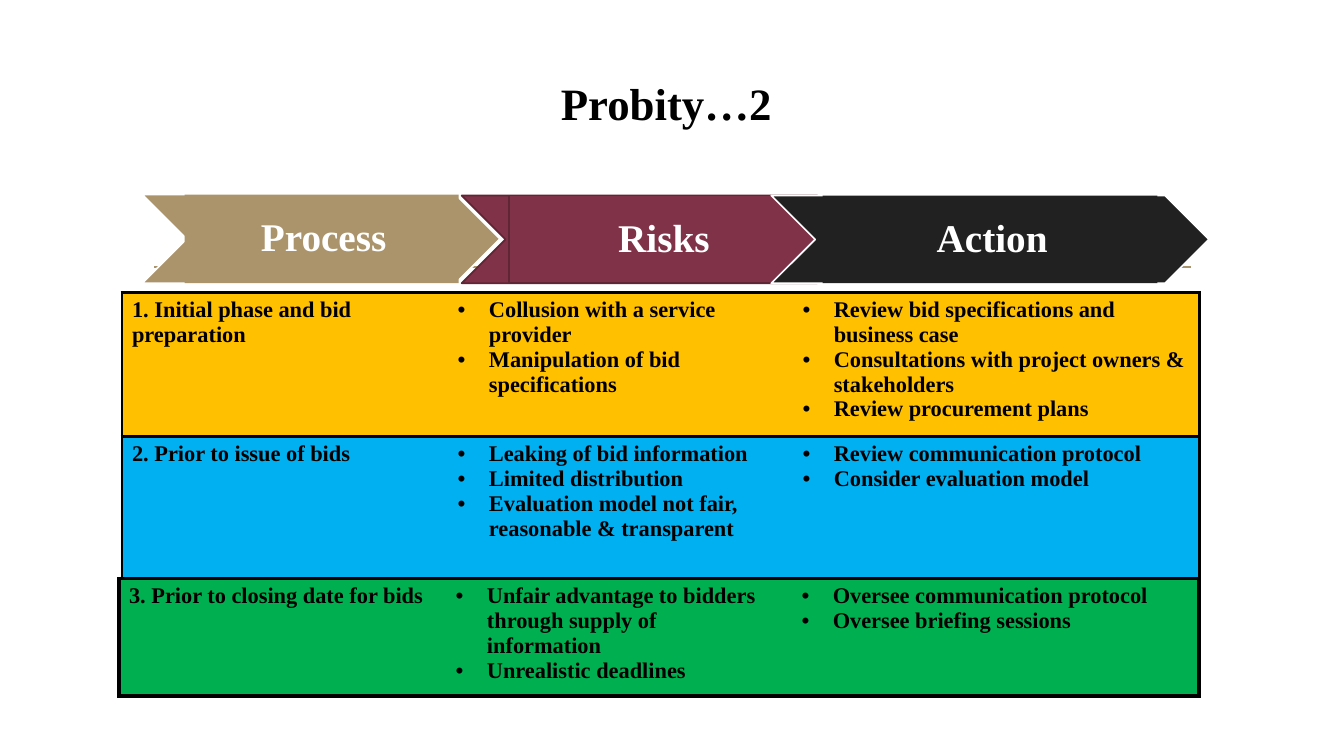
from lxml import etree
from pptx import Presentation
from pptx.dml.color import RGBColor
from pptx.enum.shapes import MSO_CONNECTOR, MSO_SHAPE
from pptx.enum.text import MSO_ANCHOR, PP_ALIGN
from pptx.oxml.ns import qn
from pptx.util import Inches, Pt

FONT = "Times New Roman"
BLACK = RGBColor(0x00, 0x00, 0x00)
WHITE = RGBColor(0xFF, 0xFF, 0xFF)
TAN = RGBColor(0xAB, 0x94, 0x6B)
WINE = RGBColor(0x80, 0x33, 0x48)
DARK_WINE = RGBColor(0x5F, 0x26, 0x35)
CHARCOAL = RGBColor(0x21, 0x21, 0x21)
AMBER = RGBColor(0xFF, 0xC0, 0x00)
BLUE = RGBColor(0x00, 0xB0, 0xF0)
GREEN = RGBColor(0x00, 0xB0, 0x50)

BULLET_HANG = 0.31
BULLET_MARGINS = (None, 0.31, 0.5)  # one per column; None means no bullets

# chevron left and width, label left and width, top, height, fill, outline, label outline
BANNERS = [
    ("Process", 1.41, 3.55, 1.83, 2.72, 1.93, 0.88, TAN, WHITE, None),
    ("Risks", 4.58, 3.96, 5.05, 3.03, 1.94, 0.87, WINE, DARK_WINE, DARK_WINE),
    ("Action", 7.65, 4.34, 8.16, 3.32, 1.94, 0.87, CHARCOAL, WHITE, None),
]

EARLY_PHASES = [
    (["1. Initial phase and bid preparation"],
     ["Collusion with a service provider", "Manipulation of bid specifications"],
     ["Review bid specifications and business case",
      "Consultations with project owners & stakeholders",
      "Review procurement plans"]),
    (["2. Prior to issue of bids"],
     ["Leaking of bid information", "Limited distribution",
      "Evaluation model not fair, reasonable & transparent"],
     ["Review communication protocol", "Consider evaluation model"]),
]
CLOSING_PHASE = [
    (["3. Prior to closing date for bids"],
     ["Unfair advantage to bidders through supply of information",
      "Unrealistic deadlines"],
     ["Oversee communication protocol", "Oversee briefing sessions"]),
]


def add_run(paragraph, text, size, color):
    run = paragraph.add_run()
    run.text = text
    run.font.name = FONT
    run.font.size = Pt(size)
    run.font.bold = True
    run.font.color.rgb = color


def add_title(slide, left, top, width, height):
    frame = slide.shapes.add_textbox(
        Inches(left), Inches(top), Inches(width), Inches(height)).text_frame
    frame.word_wrap = True
    frame.vertical_anchor = MSO_ANCHOR.MIDDLE
    frame.paragraphs[0].alignment = PP_ALIGN.CENTER
    add_run(frame.paragraphs[0], "Probity…2 ", 32, BLACK)


def add_rule(slide, left, right, y):
    rule = slide.shapes.add_connector(
        MSO_CONNECTOR.STRAIGHT, Inches(left), Inches(y), Inches(right), Inches(y))
    rule.line.color.rgb = TAN
    rule.line.width = Pt(1.25)
    etree.SubElement(rule._element.spPr, qn("a:effectLst"))


def add_block(slide, preset, left, top, width, height, fill, outline):
    block = slide.shapes.add_shape(
        preset, Inches(left), Inches(top), Inches(width), Inches(height))
    block.shadow.inherit = False
    block.fill.solid()
    block.fill.fore_color.rgb = fill
    if outline is None:
        block.line.fill.background()
    else:
        block.line.color.rgb = outline
        block.line.width = Pt(1.25)
    return block


def add_banner(slide, heading, left, width, label_left, label_width, top, height,
               fill, outline, label_outline):
    """A chevron with its heading on a rectangle of the same colour."""
    add_block(slide, MSO_SHAPE.CHEVRON, left, top, width, height, fill, outline)
    label = add_block(slide, MSO_SHAPE.RECTANGLE, label_left, top, label_width,
                      height, fill, label_outline)
    frame = label.text_frame
    frame.word_wrap = True
    frame.vertical_anchor = MSO_ANCHOR.MIDDLE
    frame.margin_left = Inches(0.06)
    frame.margin_top = frame.margin_right = frame.margin_bottom = Inches(0.02)
    paragraph = frame.paragraphs[0]
    paragraph.alignment = PP_ALIGN.CENTER
    paragraph.line_spacing = 0.9
    add_run(paragraph, heading, 28, WHITE)


def set_border(cell, side, points):
    """Draw one side of the cell in black, or hide it when points is None."""
    border = etree.SubElement(cell._tc.get_or_add_tcPr(), qn(f"a:ln{side}"))
    if points is None:
        etree.SubElement(border, qn("a:noFill"))
        return
    border.set("w", str(Pt(points)))
    solid = etree.SubElement(border, qn("a:solidFill"))
    etree.SubElement(solid, qn("a:srgbClr"), val=str(BLACK))


def set_fill(cell, color, opacity):
    cell.fill.solid()
    cell.fill.fore_color.rgb = color
    if opacity < 100:
        tint = cell._tc.tcPr.find(".//" + qn("a:srgbClr"))
        etree.SubElement(tint, qn("a:alpha"), val=str(opacity * 1000))


def fill_cell(cell, items, margin):
    for index, item in enumerate(items):
        frame = cell.text_frame
        paragraph = frame.add_paragraph() if index else frame.paragraphs[0]
        if margin is not None:
            properties = paragraph._p.get_or_add_pPr()
            properties.set("marL", str(Inches(margin)))
            properties.set("indent", str(-Inches(BULLET_HANG)))
            etree.SubElement(properties, qn("a:buFont"), typeface="Arial")
            etree.SubElement(properties, qn("a:buChar"), char="•")
        add_run(paragraph, item, 16, BLACK)


def add_phase_table(slide, left, top, widths, heights, phases, colors, rules,
                    opacity=100):
    """Phases as rows; rules holds the border widths above, between and below them."""
    table = slide.shapes.add_table(
        len(phases), len(widths), Inches(left), Inches(top),
        Inches(sum(widths)), Inches(sum(heights))).table
    table.first_row = table.horz_banding = False
    for column, width in zip(table.columns, widths):
        column.width = Inches(width)
    for r, phase in enumerate(phases):
        table.rows[r].height = Inches(heights[r])
        for c, items in enumerate(phase):
            cell = table.cell(r, c)
            set_border(cell, "L", rules[0] if c == 0 else None)
            set_border(cell, "R", rules[0] if c == len(widths) - 1 else None)
            set_border(cell, "T", rules[r])
            set_border(cell, "B", rules[r + 1])
            set_fill(cell, colors[r], opacity)
            fill_cell(cell, items, BULLET_MARGINS[c])


def main():
    deck = Presentation()
    deck.slide_width, deck.slide_height = Inches(13.33), Inches(7.5)
    slide = deck.slides.add_slide(deck.slide_layouts[6])
    add_rule(slide, 1.53, 11.81, 2.65)
    add_title(slide, 1.79, 0.63, 9.75, 0.78)
    for banner in BANNERS:
        add_banner(slide, *banner)
    add_phase_table(slide, 1.21, 2.9, (3.23, 3.23, 4.23), (1.28, 1.57),
                    EARLY_PHASES, (AMBER, BLUE), (2.25, 2.25, 3))
    add_phase_table(slide, 1.18, 5.74, (3.24, 3.24, 4.23), (1.14,),
                    CLOSING_PHASE, (GREEN,), (3, 3), opacity=55)
    deck.save("out.pptx")


if __name__ == "__main__":
    main()
